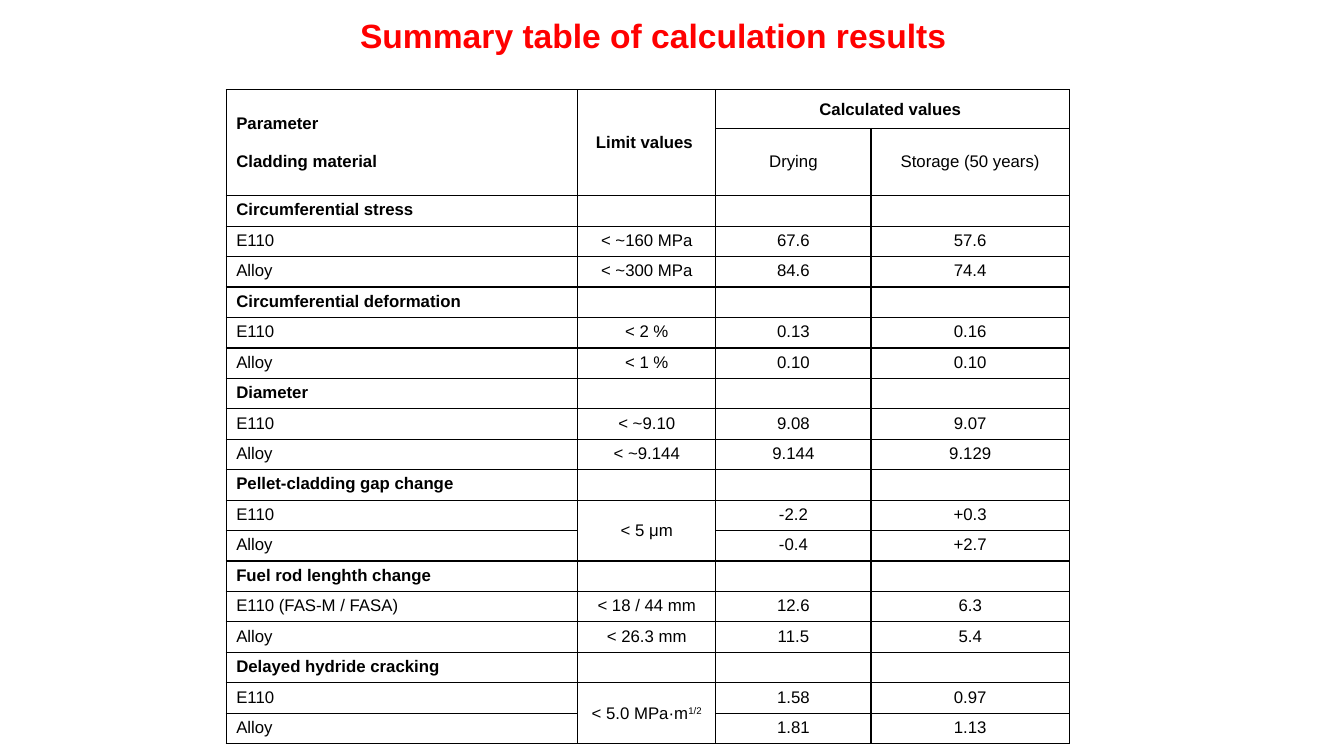
from lxml import etree
from pptx import Presentation
from pptx.dml.color import RGBColor
from pptx.enum import text
from pptx.oxml.ns import qn
from pptx.util import Cm, Pt

RED = RGBColor(0xFF, 0x00, 0x00)
BLACK = RGBColor(0x00, 0x00, 0x00)
FONT_NAME = "Arial"
BODY_SIZE = Pt(12)
BORDER_WIDTH = Pt(0.96)

COLUMN_WIDTHS = [8.86, 3.48, 3.91, 5.0]
HEADER_HEIGHTS = [0.98, 1.69]
ROW_HEIGHT = 0.765
LEFT, CENTER = text.PP_ALIGN.LEFT, text.PP_ALIGN.CENTER

# Each group: heading, then rows of material, limit, drying and storage values.
# A limit of None shares the limit of the row above.
GROUPS = [
    ("Circumferential stress", [
        ("Е110", "< ~160 MPa", "67.6", "57.6"),
        ("Alloy", "< ~300 MPa", "84.6", "74.4")]),
    ("Circumferential deformation", [
        ("Е110", "< 2 %", "0.13", "0.16"),
        ("Alloy", "< 1 %", "0.10", "0.10")]),
    ("Diameter", [
        ("Е110", "< ~9.10", "9.08", "9.07"),
        ("Alloy", "< ~9.144", "9.144", "9.129")]),
    ("Pellet-cladding gap change", [
        ("Е110", "< 5 μm", "-2.2", "+0.3"),
        ("Alloy", None, "-0.4", "+2.7")]),
    ("Fuel rod lenghth change", [
        ("Е110 (FAS-M / FASA)", "< 18 / 44 mm", "12.6", "6.3"),
        ("Alloy", "< 26.3 mm", "11.5", "5.4")]),
    ("Delayed hydride cracking", [
        ("Е110", "< 5.0 MPa·m^1/2", "1.58", "0.97"),
        ("Alloy", None, "1.81", "1.13")]),
]


def apply_format(target, values):
    for name, value in values.items():
        setattr(target, name, value)


def add_run(paragraph, content, color, **font_values):
    run = paragraph.add_run()
    run.text = content
    apply_format(run.font, {"name": FONT_NAME, **font_values})
    run.font.color.rgb = color
    return run


def draw_borders(cell):
    properties = cell._tc.get_or_add_tcPr()
    for index, side in enumerate(("a:lnL", "a:lnR", "a:lnT", "a:lnB")):
        line = etree.Element(qn(side), w=str(BORDER_WIDTH))
        fill = etree.SubElement(line, qn("a:solidFill"))
        etree.SubElement(fill, qn("a:srgbClr"), val=str(BLACK))
        properties.insert(index, line)


def style_empty_cell(cell):
    """Clear the fill, draw the borders and keep an empty row at body size."""
    cell.fill.background()
    draw_borders(cell)
    paragraph = cell.text_frame.paragraphs[0]
    etree.SubElement(paragraph._p, qn("a:endParaRPr"), sz=str(int(BODY_SIZE.pt * 100)))


def write_cell(cell, content, alignment=CENTER, bold=False, middle=False):
    """Write lines of text; what follows a caret is set as superscript."""
    if middle:
        cell.vertical_anchor = text.MSO_ANCHOR.MIDDLE
    for index, line in enumerate(content.split("\n")):
        frame = cell.text_frame
        paragraph = frame.add_paragraph() if index else frame.paragraphs[0]
        paragraph.alignment = alignment
        if index:
            paragraph.space_before = Pt(13.8)
        base, _, exponent = line.partition("^")
        add_run(paragraph, base, BLACK, size=BODY_SIZE, bold=bold)
        if exponent:
            run = add_run(paragraph, exponent, BLACK, size=BODY_SIZE, bold=bold)
            run.font._element.set("baseline", "30000")


def write_header(table):
    for first, last in (((0, 0), (1, 0)), ((0, 1), (1, 1)), ((0, 2), (0, 3))):
        table.cell(*first).merge(table.cell(*last))
    write_cell(table.cell(0, 0), "Parameter\nCladding material", LEFT, True, True)
    write_cell(table.cell(0, 1), "Limit values ", bold=True, middle=True)
    write_cell(table.cell(0, 2), "Calculated values ", bold=True, middle=True)
    write_cell(table.cell(1, 2), "Drying", middle=True)
    write_cell(table.cell(1, 3), "Storage (50 years)", middle=True)


def write_group(table, top_row, heading, rows):
    write_cell(table.cell(top_row, 0), heading, LEFT, bold=True)
    for row, (material, limit, *values) in enumerate(rows, top_row + 1):
        write_cell(table.cell(row, 0), material, LEFT)
        if limit is None:
            shared_limit = table.cell(row - 1, 1)
            shared_limit.merge(table.cell(row, 1))
            shared_limit.vertical_anchor = text.MSO_ANCHOR.MIDDLE
        else:
            write_cell(table.cell(row, 1), limit)
        for column, value in enumerate(values, 2):
            write_cell(table.cell(row, column), value)


def add_results_table(slide, left, top):
    heights = HEADER_HEIGHTS + [ROW_HEIGHT] * sum(1 + len(rows) for _, rows in GROUPS)
    shape = slide.shapes.add_table(
        len(heights), len(COLUMN_WIDTHS), Cm(left), Cm(top),
        Cm(sum(COLUMN_WIDTHS)), Cm(sum(heights)))
    table = shape.table
    apply_format(table, {"first_row": False, "horz_banding": False})
    for column, width in zip(table.columns, COLUMN_WIDTHS):
        column.width = Cm(width)
    for row, height in zip(table.rows, heights):
        row.height = Cm(height)
    for cell in table.iter_cells():
        style_empty_cell(cell)

    write_header(table)
    top_row = len(HEADER_HEIGHTS)
    for heading, rows in GROUPS:
        write_group(table, top_row, heading, rows)
        top_row += 1 + len(rows)


def format_title(slide, left, top, width, height):
    title = slide.shapes.title
    apply_format(title, {"left": Cm(left), "top": Cm(top),
                         "width": Cm(width), "height": Cm(height)})
    apply_format(title.text_frame, {
        "word_wrap": True,
        "auto_size": text.MSO_AUTO_SIZE.NONE,
        "vertical_anchor": text.MSO_ANCHOR.TOP,
    })
    paragraph = title.text_frame.paragraphs[0]
    paragraph.alignment = CENTER
    add_run(paragraph, "Summary table of calculation results ", RED,
            size=Pt(24), bold=True)


def main():
    presentation = Presentation()
    apply_format(presentation, {"slide_width": Cm(33.87), "slide_height": Cm(19.05)})
    slide = presentation.slides.add_slide(presentation.slide_layouts[5])
    format_title(slide, 5.0, 0.25, 23.16, 1.27)
    add_results_table(slide, 5.7, 2.26)
    presentation.save("out.pptx")


if __name__ == "__main__":
    main()
